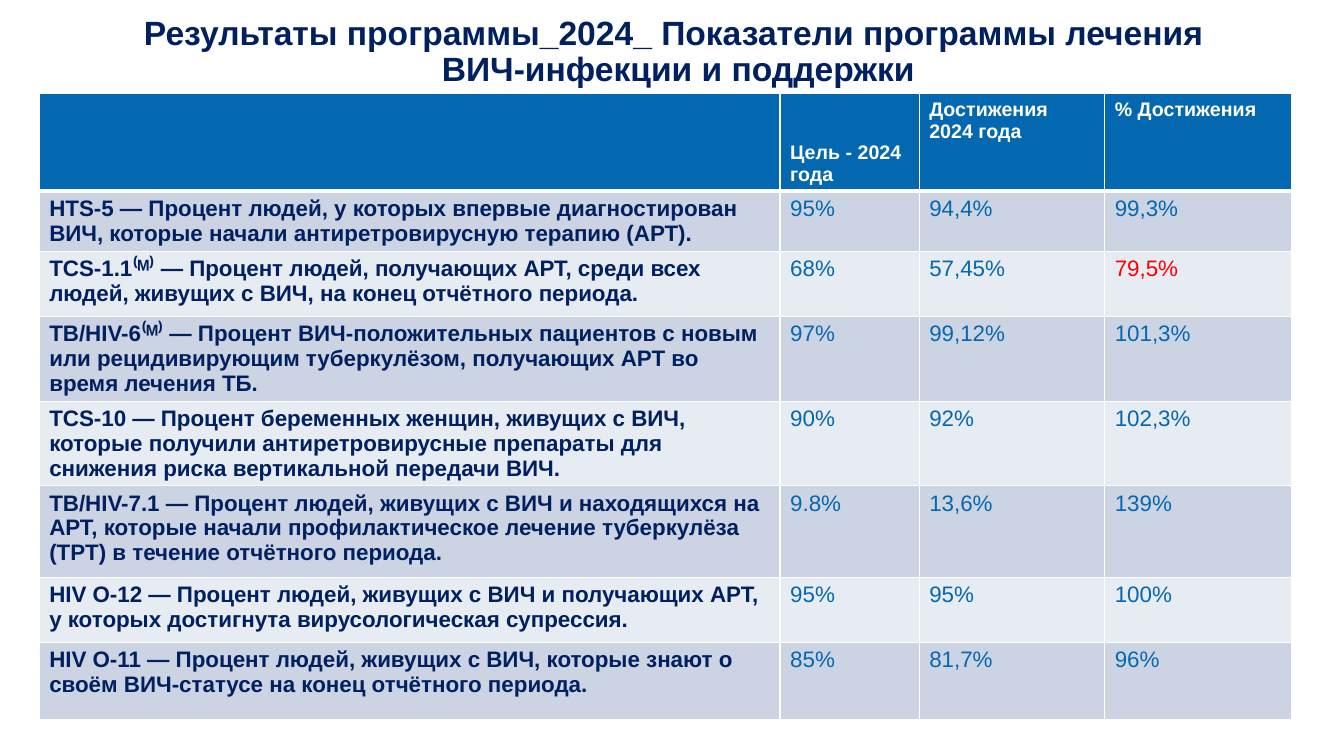
from dataclasses import dataclass

from lxml import etree
from pptx import Presentation
from pptx.dml.color import RGBColor
from pptx.enum import text
from pptx.oxml import ns
from pptx.util import Pt


@dataclass(frozen=True)
class Theme:
    font: str = "Arial"
    navy: str = "002060"
    blue: str = "0468B1"
    red: str = "FF0000"
    white: str = "FFFFFF"
    bands: tuple[str, str] = ("CCD4E4", "E7EBF2")
    title_size: float = 24
    header_size: float = 14
    body_size: float = 16
    thin_line: float = 1
    thick_line: float = 3


@dataclass(frozen=True)
class Indicator:
    name: str
    target: str
    result: str
    achieved: str
    height: float
    below_target: bool = False


THEME = Theme()
COLUMN_WIDTHS = (529.2, 99.4, 132.5, 133.2)
HEADERS = ("", "Цель - 2024 года", "Достижения 2024 года", "% Достижения")
HEADER_HEIGHT = 69.5
INDICATORS = (
    Indicator("HTS-5 — Процент людей, у которых впервые диагностирован ВИЧ, "
              "которые начали антиретровирусную терапию (АРТ).",
              "95%", "94,4%", "99,3%", 43),
    Indicator("TCS-1.1⁽ᴹ⁾ — Процент людей, получающих АРТ, среди всех людей, "
              "живущих с ВИЧ, на конец отчётного периода.",
              "68%", "57,45%", "79,5%", 46.5, below_target=True),
    Indicator("TB/HIV-6⁽ᴹ⁾ — Процент ВИЧ-положительных пациентов с новым или "
              "рецидивирующим туберкулёзом, получающих АРТ во время лечения ТБ.",
              "97%", "99,12%", "101,3%", 60.5),
    Indicator("TCS-10 — Процент беременных женщин, живущих с ВИЧ, которые получили "
              "антиретровирусные препараты для снижения риска вертикальной передачи ВИЧ.",
              "90%", "92%", "102,3%", 60.5),
    Indicator("TB/HIV-7.1 — Процент людей, живущих с ВИЧ и находящихся на АРТ, которые "
              "начали профилактическое лечение туберкулёза (TPT) в течение отчётного периода.",
              "9.8%", "13,6%", "139%", 65.5),
    Indicator("HIV O-12 — Процент людей, живущих с ВИЧ и получающих АРТ, "
              "у которых достигнута вирусологическая супрессия.",
              "95%", "95%", "100%", 46.5),
    Indicator("HIV O-11 — Процент людей, живущих с ВИЧ, которые знают о своём "
              "ВИЧ-статусе на конец отчётного периода.",
              "85%", "81,7%", "96%", 55),
)


def format_font(font, size: float, color: str, bold: bool) -> None:
    for name, value in {"name": THEME.font, "size": Pt(size), "bold": bold}.items():
        setattr(font, name, value)
    font.color.rgb = RGBColor.from_string(color)


def set_borders(cell, top: float, bottom: float) -> None:
    properties = cell._tc.get_or_add_tcPr()
    widths = {"L": THEME.thin_line, "R": THEME.thin_line, "T": top, "B": bottom}
    for position, (side, width) in enumerate(widths.items()):
        line = etree.Element(ns.qn(f"a:ln{side}"), w=str(Pt(width)))
        fill = etree.SubElement(line, ns.qn("a:solidFill"))
        etree.SubElement(fill, ns.qn("a:srgbClr"), val=THEME.white)
        properties.insert(position, line)


def fill_cell(cell, words: str, fill: str, size: float, color: str, bold: bool) -> None:
    cell.fill.solid()
    cell.fill.fore_color.rgb = RGBColor.from_string(fill)
    para = cell.text_frame.paragraphs[0]
    if words:
        span = para.add_run()
        span.text = words
        format_font(span.font, size, color, bold)


def add_title(page) -> None:
    title = page.shapes.title
    place = {"left": Pt(0), "top": Pt(10), "width": Pt(969), "height": Pt(57)}
    for name, value in place.items():
        setattr(title, name, value)
    frame = title.text_frame
    frame.word_wrap = True
    frame.auto_size = text.MSO_AUTO_SIZE.NONE
    frame.vertical_anchor = text.MSO_ANCHOR.BOTTOM
    para = frame.paragraphs[0]
    para.text = ("Результаты программы_2024_ Показатели программы лечения \v"
                 "ВИЧ-инфекции и поддержки")
    para.alignment = text.PP_ALIGN.CENTER
    para.line_spacing = 0.9
    for span in para.runs:
        format_font(span.font, THEME.title_size, THEME.navy, True)


def add_indicator_table(page) -> None:
    heights = [HEADER_HEIGHT] + [item.height for item in INDICATORS]
    table = page.shapes.add_table(
        len(heights), len(COLUMN_WIDTHS), Pt(28), Pt(67),
        Pt(sum(COLUMN_WIDTHS)), Pt(sum(heights))).table
    for column, width in zip(table.columns, COLUMN_WIDTHS):
        column.width = Pt(width)
    for row, height in zip(table.rows, heights):
        row.height = Pt(height)

    for column, words in enumerate(HEADERS):
        cell = table.cell(0, column)
        fill_cell(cell, words, THEME.blue, THEME.header_size, THEME.white, True)
        set_borders(cell, THEME.thin_line, THEME.thick_line)
    table.cell(0, 1).vertical_anchor = text.MSO_ANCHOR.BOTTOM

    for row, item in enumerate(INDICATORS, start=1):
        achieved_color = THEME.red if item.below_target else THEME.blue
        entries = ((item.name, THEME.navy), (item.target, THEME.blue),
                   (item.result, THEME.blue), (item.achieved, achieved_color))
        top = THEME.thick_line if row == 1 else THEME.thin_line
        for column, (words, color) in enumerate(entries):
            cell = table.cell(row, column)
            fill_cell(cell, words, THEME.bands[(row - 1) % 2], THEME.body_size,
                      color, column == 0)
            set_borders(cell, top, THEME.thin_line)


def main() -> None:
    deck = Presentation()
    deck.slide_width, deck.slide_height = Pt(960), Pt(540)
    page = deck.slides.add_slide(deck.slide_layouts.get_by_name("Title Only"))
    add_title(page)
    add_indicator_table(page)
    deck.save("out.pptx")


if __name__ == "__main__":
    main()
